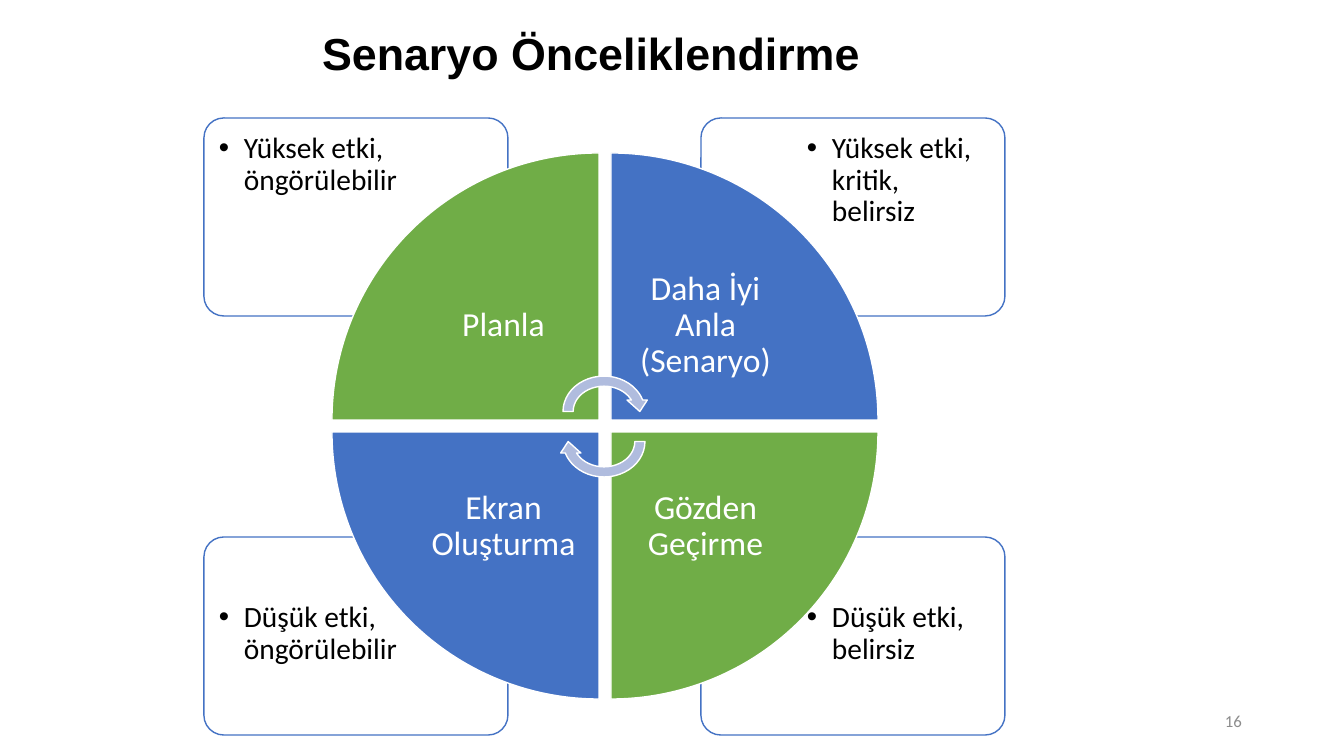
"""Build the scenario prioritisation slide: four quadrants around a cycle."""
from lxml import etree
from pptx import Presentation
from pptx.dml.color import RGBColor
from pptx.enum.shapes import MSO_SHAPE
from pptx.enum.text import MSO_ANCHOR, MSO_AUTO_SIZE, PP_ALIGN
from pptx.oxml.ns import qn
from pptx.util import Pt

CARD, WEDGE, ARROW = MSO_SHAPE.ROUNDED_RECTANGLE, MSO_SHAPE.PIE_WEDGE, MSO_SHAPE.CIRCULAR_ARROW
TOP, MIDDLE = MSO_ANCHOR.TOP, MSO_ANCHOR.MIDDLE
LEFT, CENTER, RIGHT = PP_ALIGN.LEFT, PP_ALIGN.CENTER, PP_ALIGN.RIGHT
NO_FIT = MSO_AUTO_SIZE.NONE

PX = 914400 / 100.8
COLORS = {
    "white": "FFFFFF",
    "black": "000000",
    "blue": "4472C4",
    "green": "70AD47",
    "arrow": "B0BCDE",
    "number": "8C8C8C",
}
TITLE = {"size": Pt(32), "name": "Arial", "bold": True}
NOTE = {"size": Pt(21), "name": "Calibri"}
LABEL = {"size": Pt(24), "name": "Calibri"}
NUMBER = {"size": Pt(12), "name": "Calibri"}


def draw(kind, box, fill, line, rotation=0):
    shape = slide.shapes.add_shape(kind, *[round(v * PX) for v in box])
    shape.shadow.inherit = False
    shape.rotation = rotation
    shape.fill.solid()
    shape.fill.fore_color.rgb = RGBColor.from_string(COLORS[fill])
    shape.line.color.rgb = RGBColor.from_string(COLORS[line])
    shape.line.width = Pt(1)
    return shape


def write(holder, text, font, color, align, anchor, inset, spacing=0.9):
    frame = holder.text_frame
    frame.text = text
    margins = {f"margin_{side}": round(inset * PX) for side in ("left", "top", "right", "bottom")}
    layout = {"word_wrap": True, "auto_size": NO_FIT, "vertical_anchor": anchor, **margins}
    for key, value in layout.items():
        setattr(frame, key, value)
    paragraph = frame.paragraphs[0]
    paragraph.alignment = align
    paragraph.line_spacing = spacing
    run_font = paragraph.runs[0].font
    for key, value in font.items():
        setattr(run_font, key, value)
    run_font.color.rgb = RGBColor.from_string(COLORS[color])
    return paragraph


prs = Presentation()
prs.slide_width, prs.slide_height = round(1344 * PX), round(756 * PX)
slide = prs.slides.add_slide(prs.slide_layouts[5])

title = slide.shapes.title
for side, length in {"left": 312, "top": 22, "width": 869, "height": 68}.items():
    setattr(title, side, round(length * PX))
write(title, "Senaryo Önceliklendirme", TITLE, "black", LEFT, MIDDLE, 10)

quadrants = [
    (0, 0, 0, "green", "Planla", "Yüksek etki, öngörülebilir"),
    (1, 0, 90, "blue", "Daha İyi Anla (Senaryo)", "Yüksek etki, kritik, belirsiz"),
    (1, 1, 180, "green", "Gözden Geçirme", "Düşük etki, belirsiz"),
    (0, 1, 270, "blue", "Ekran Oluşturma", "Düşük etki, öngörülebilir"),
]

for col, row, _, _, _, note in reversed(quadrants):
    card = draw(CARD, (204 + 497 * col, 118 + 419 * row, 304, 198), "white", "blue")
    card.adjustments[0] = 0.1
    card_color = card.fill._xPr.find(qn("a:solidFill"))[0]
    etree.SubElement(card_color, qn("a:alpha"), val="90000")

    note_box = (208 + 588 * col, 122 + 469 * row, 204, 139)
    holder = slide.shapes.add_textbox(*[round(v * PX) for v in note_box])
    bullet = write(holder, note, NOTE, "black", LEFT, TOP, 11)
    properties = bullet._p.get_or_add_pPr()
    properties.set("marL", str(round(25 * PX)))
    properties.set("indent", str(-round(25 * PX)))
    etree.SubElement(properties, qn("a:buFont"), typeface="Arial")
    etree.SubElement(properties, qn("a:buChar"), char="•")

for col, row, rotation, color, label, _ in quadrants:
    draw(WEDGE, (332 + 279 * col, 153 + 279 * row, 267, 267), color, "white", rotation)
    label_box = (409 + 202 * col, 231 + 201 * row, 189, 189)
    holder = slide.shapes.add_textbox(*[round(v * PX) for v in label_box])
    write(holder, label, LABEL, "white", CENTER, MIDDLE, 19)

for turn in range(2):
    draw(ARROW, (558, 371 + 30 * turn, 92, 81), "arrow", "white", 180 * turn)

number = slide.shapes.add_textbox(*[round(v * PX) for v in (950, 701, 302, 40)])
write(number, "16", NUMBER, "number", RIGHT, MIDDLE, 10, 1.0)

prs.save("out.pptx")
